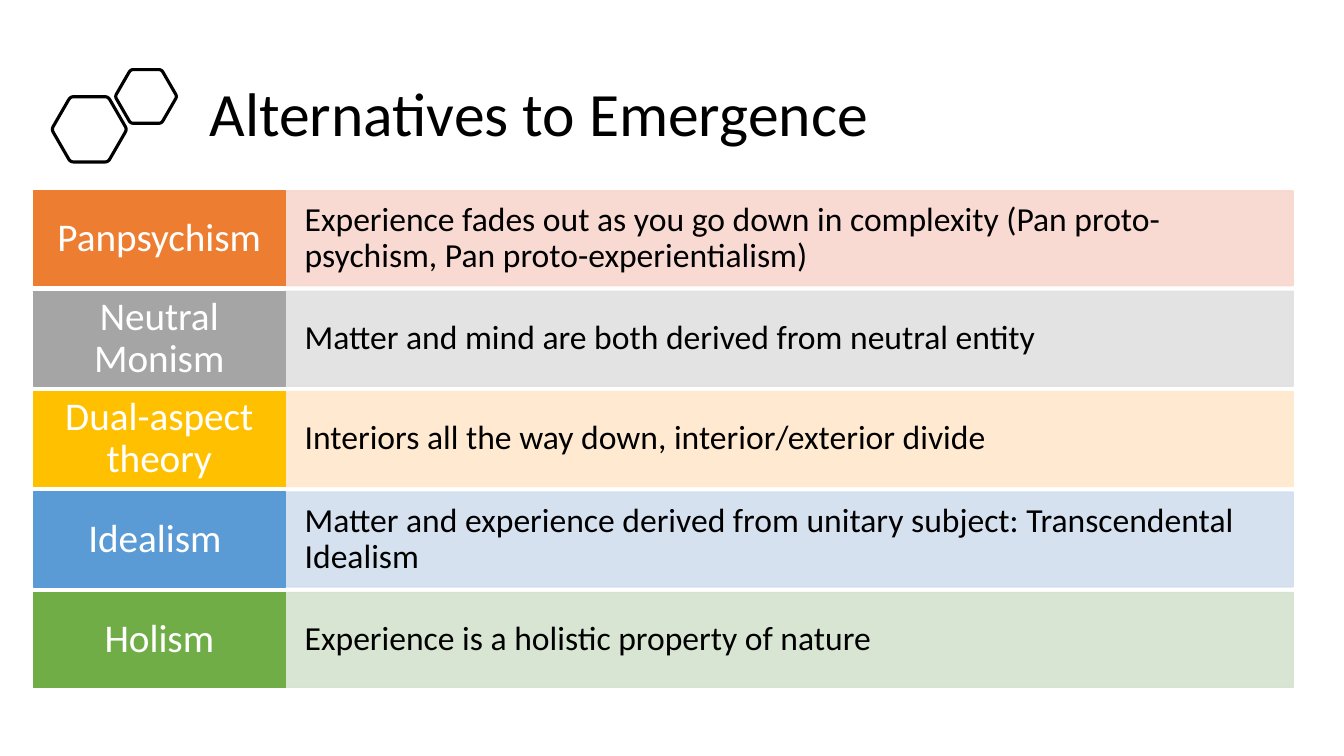
import math

import lxml.etree
import pptx
import pptx.dml.color
import pptx.enum.shapes
import pptx.enum.text
import pptx.oxml.ns
import pptx.util

Cm = pptx.util.Cm
PP_ALIGN = pptx.enum.text.PP_ALIGN

THEME = {
    "font": "Calibri",
    "ink": "000000",
    "label_ink": "FFFFFF",
    "title_size": 44,
    "label_size": 28,
    "description_size": 24,
    "orange": ("ED7D31", "F8D7CE"),
    "grey": ("A5A5A5", "E1E1E1"),
    "gold": ("FFC000", "FFE8CC"),
    "blue": ("5B9BD5", "D2DEEF"),
    "green": ("70AD47", "D5E3CF"),
}


def write_text(shape, text, size, color, align, side_inset, end_inset):
    frame = shape.text_frame
    frame.word_wrap = True
    frame.vertical_anchor = pptx.enum.text.MSO_ANCHOR.MIDDLE
    frame.margin_left = frame.margin_right = Cm(side_inset)
    frame.margin_top = frame.margin_bottom = Cm(end_inset)
    paragraph = frame.paragraphs[0]
    paragraph.alignment = align
    paragraph.line_spacing = 0.9
    run = paragraph.add_run()
    run.text = text
    run.font.name = THEME["font"]
    run.font.size = pptx.util.Pt(size)
    run.font.color.rgb = pptx.dml.color.RGBColor.from_string(color)


def add_band(left, top, width, height, color, opacity):
    band = slide.shapes.add_shape(
        pptx.enum.shapes.MSO_SHAPE.RECTANGLE, Cm(left), Cm(top), Cm(width), Cm(height)
    )
    band.shadow.inherit = False
    band.fill.solid()
    band.line.width = pptx.util.Pt(1)
    for paint in (band.fill.fore_color, band.line.color):
        paint.rgb = pptx.dml.color.RGBColor.from_string(color)
    if opacity < 100:
        for tint in band.element.spPr.iter(pptx.oxml.ns.qn("a:srgbClr")):
            alpha = lxml.etree.SubElement(tint, pptx.oxml.ns.qn("a:alpha"))
            alpha.set("val", str(opacity * 1000))
    return band


presentation = pptx.Presentation()
presentation.slide_width = Cm(33.87)
presentation.slide_height = Cm(19.05)
slide = presentation.slides.add_slide(presentation.slide_layouts[6])

title = slide.shapes.add_textbox(Cm(5.03), Cm(1.45), Cm(27.46), Cm(2.97))
write_text(title, "Alternatives to Emergence", THEME["title_size"], THEME["ink"],
           PP_ALIGN.LEFT, 0.25, 0.13)

CORNER_CUT = 0.09
CURVE_STEPS = 6
for center_x, center_y, radius in ((2.25, 3.26, 0.95), (3.68, 2.43, 0.78)):
    vertices = [
        (center_x + radius * math.cos(math.radians(angle)),
         center_y + radius * math.sin(math.radians(angle)))
        for angle in range(0, 360, 60)
    ]
    outline = []
    for index, vertex in enumerate(vertices):
        before, after = vertices[index - 1], vertices[(index + 1) % 6]
        for step in range(CURVE_STEPS + 1):
            t = step / CURVE_STEPS
            toward_before = CORNER_CUT * (1 - t) ** 2
            toward_after = CORNER_CUT * t ** 2
            outline.append(tuple(
                Cm(v + toward_before * (b - v) + toward_after * (a - v))
                for v, b, a in zip(vertex, before, after)
            ))
    builder = slide.shapes.build_freeform(*outline[0])
    builder.add_line_segments(outline[1:], close=True)
    hexagon = builder.convert_to_shape()
    hexagon.shadow.inherit = False
    hexagon.fill.background()
    hexagon.line.width = pptx.util.Pt(2.25)
    hexagon.line.color.rgb = pptx.dml.color.RGBColor.from_string(THEME["ink"])

THEORIES = [
    ("Panpsychism", "orange",
     "Experience fades out as you go down in complexity "
     "(Pan proto-psychism, Pan proto-experientialism)"),
    ("Neutral Monism", "grey", "Matter and mind are both derived from neutral entity"),
    ("Dual-aspect theory", "gold", "Interiors all the way down, interior/exterior divide"),
    ("Idealism ", "blue",
     "Matter and experience derived from unitary subject: Transcendental Idealism"),
    ("Holism", "green", "Experience is a holistic property of nature"),
]
ROWS_LEFT, ROWS_TOP = 0.84, 4.81
ROW_PITCH, ROW_HEIGHT = 2.53, 2.39
LABEL_WIDTH, DESCRIPTION_WIDTH = 6.35, 25.4

for row, (theory, hue, explanation) in enumerate(THEORIES):
    row_top = ROWS_TOP + row * ROW_PITCH
    strong, pale = THEME[hue]
    description = add_band(ROWS_LEFT + LABEL_WIDTH, row_top, DESCRIPTION_WIDTH,
                           ROW_HEIGHT, pale, 90)
    write_text(description, explanation, THEME["description_size"], THEME["ink"],
               PP_ALIGN.LEFT, 0.49, 0.24)
    label = add_band(ROWS_LEFT, row_top, LABEL_WIDTH, ROW_HEIGHT, strong, 100)
    write_text(label, theory, THEME["label_size"], THEME["label_ink"],
               PP_ALIGN.CENTER, 0.33, 0.24)

presentation.save("out.pptx")
